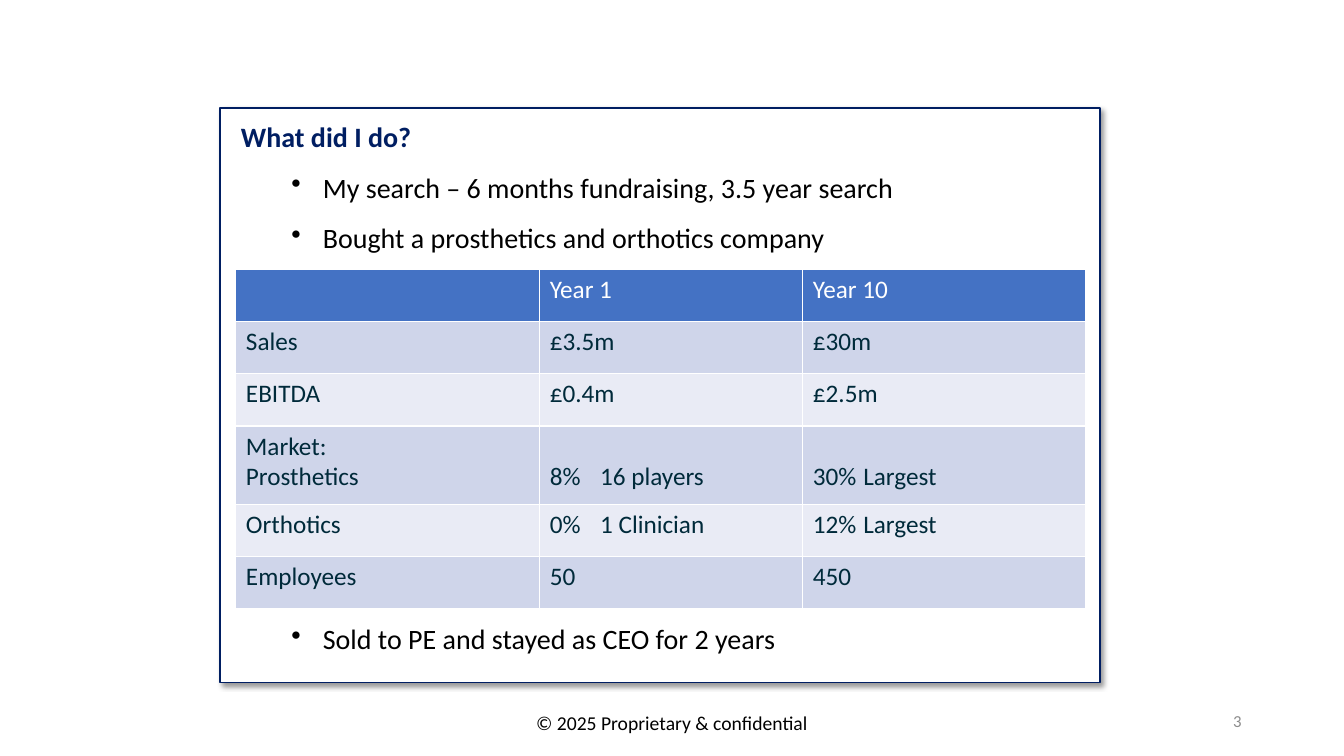
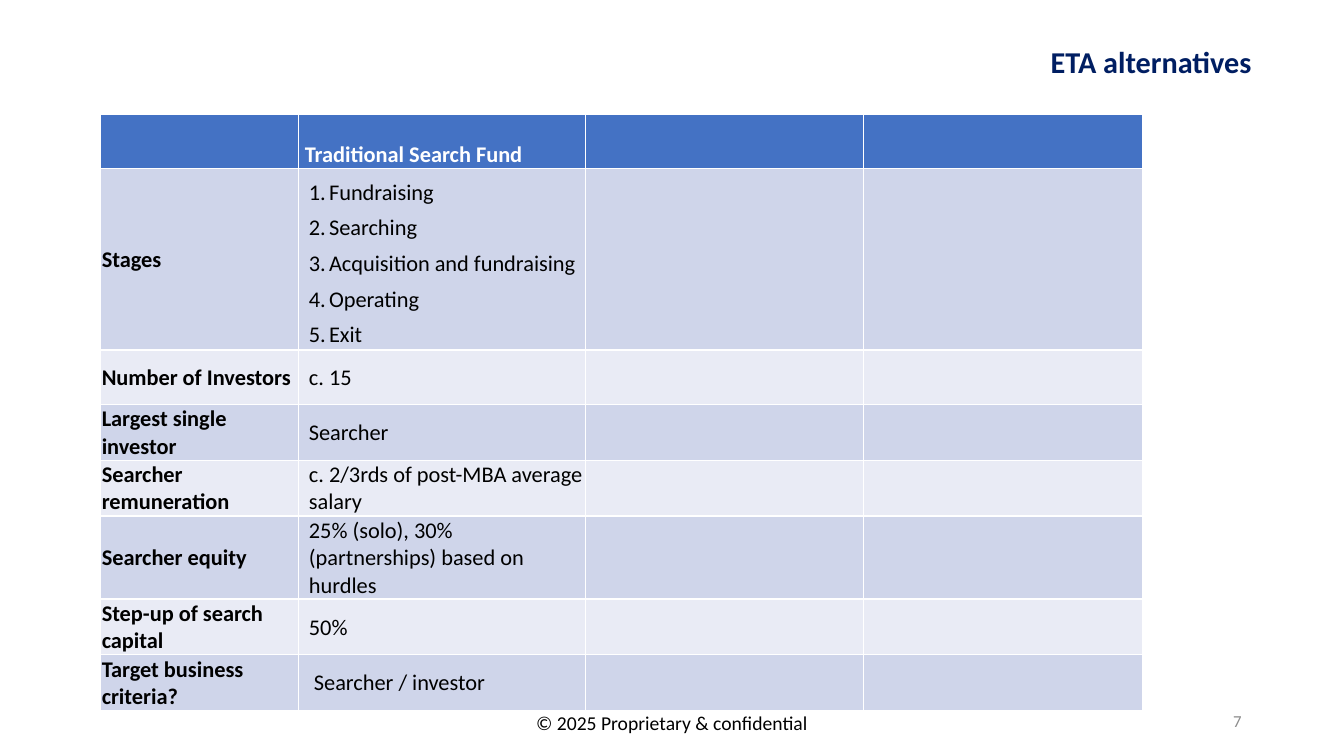
from dataclasses import dataclass

from lxml import etree
from pptx import Presentation
from pptx.dml.color import RGBColor
from pptx.enum import shapes, text
from pptx.oxml import ns
from pptx.util import Pt

ALIGN, ANCHOR = text.PP_ALIGN, text.MSO_ANCHOR


@dataclass(frozen=True)
class Theme:
    font: str = "Calibri"
    navy: str = "001E62"
    ink: str = "002A3A"
    black: str = "000000"
    white: str = "FFFFFF"
    grey: str = "8C8C8C"
    header: str = "4472C4"
    bands: tuple = ("CFD5EA", "E9EBF5")
    title: float = 21.6
    body: float = 20
    table: float = 18
    dense: float = 16
    footer: float = 14
    page: float = 12


T = Theme()
BULLET = ("buChar", {"char": "•"})
NUMBER = ("buAutoNum", {"type": "arabicPeriod"})


def rgb(value):
    return RGBColor.from_string(value)


def sub(parent, tag, **attrs):
    return etree.SubElement(parent, ns.qn("a:" + tag), attrs)


def style(p, size, color, bold=False, align=ALIGN.LEFT):
    p.alignment = align
    f = p.font
    f.name, f.size, f.bold, f.color.rgb = T.font, Pt(size), bold, rgb(color)


def indent(p, left, first=0, marker=None, tab=None):
    """Set the indents in points, with an optional list marker or tab stop."""
    pPr = p._p.get_or_add_pPr()
    pPr.set("marL", str(Pt(left)))
    pPr.set("indent", str(Pt(first)))
    if marker:
        sub(pPr, marker[0], **marker[1])
    if tab:
        sub(sub(pPr, "tabLst"), "tab", pos=str(Pt(tab)), algn="l")


def paragraphs(tf, lines):
    """Write one paragraph per line and yield each for formatting."""
    for i, line in enumerate(lines):
        p = tf.paragraphs[0] if i == 0 else tf.add_paragraph()
        p.text = line
        yield p


def add_text(s, box, lines, anchor=ANCHOR.TOP):
    tf = s.shapes.add_textbox(*map(Pt, box)).text_frame
    tf.word_wrap, tf.vertical_anchor = True, anchor
    return list(paragraphs(tf, lines))


def add_bullets(s, box, bullets, heading=None):
    lines = ([heading] if heading else []) + bullets
    for i, p in enumerate(add_text(s, box, lines)):
        p.space_after = Pt(12)
        if heading and i == 0:
            style(p, T.body, T.navy, True)
        else:
            p.level = 1
            indent(p, 58.5, -22.5, BULLET)
            style(p, T.body, T.black)


def add_card(s, box):
    sp = s.shapes.add_shape(shapes.MSO_SHAPE.RECTANGLE, *map(Pt, box))
    sp.fill.solid()
    sp.fill.fore_color.rgb = rgb(T.white)
    sp.line.color.rgb, sp.line.width = rgb(T.navy), Pt(1.25)
    sp.shadow.inherit = False
    effects = sp._element.spPr.find(ns.qn("a:effectLst"))
    shadow = sub(effects, "outerShdw", blurRad=str(Pt(4)), dist=str(Pt(2.8)),
                 dir="2700000", algn="tl", rotWithShape="0")
    sub(sub(shadow, "srgbClr", val=T.black), "alpha", val="40000")


def add_grid(s, left, top, widths, heights):
    """Add an empty table with a header fill and two alternating row fills."""
    table = s.shapes.add_table(len(heights), len(widths), Pt(left), Pt(top),
                               Pt(sum(widths)), Pt(sum(heights))).table
    for column, width in zip(table.columns, widths):
        column.width = Pt(width)
    for i, (row, height) in enumerate(zip(table.rows, heights)):
        row.height = Pt(height)
        for cell in row.cells:
            cell.fill.solid()
            cell.fill.fore_color.rgb = rgb(T.bands[(i - 1) % 2] if i else T.header)
    return table


def add_footer(s, number):
    p, = add_text(s, (318, 504.5, 324, 29), ["© 2025 Proprietary & confidential"])
    style(p, T.footer, T.black, align=ALIGN.CENTER)
    p, = add_text(s, (678, 500.5, 216, 29), [number], ANCHOR.MIDDLE)
    style(p, T.page, T.grey, align=ALIGN.RIGHT)


def add_title(s, box, title):
    sp = s.shapes.title
    sp.left, sp.top, sp.width, sp.height = map(Pt, box)
    tf = sp.text_frame
    tf.vertical_anchor, tf.margin_right = ANCHOR.MIDDLE, 0
    p, = paragraphs(tf, [title])
    p.line_spacing = 0.9
    style(p, T.title, T.navy, True, ALIGN.RIGHT)


def add_results(s, left, top):
    rows = [("", "Year 1", "Year 10"),
            ("Sales", "£3.5m", "£30m"),
            ("EBITDA", "£0.4m", "£2.5m"),
            ("Market:\nProsthetics", "8%\t16 players", "30%\tLargest"),
            ("Orthotics", "0%\t1 Clinician", "12%\tLargest"),
            ("Employees", "50", "450")]
    market, tabs = 3, (None, 30, 39)
    heights = [56.2 if i == market else 37.3 for i in range(len(rows))]
    table = add_grid(s, left, top, (217, 188, 202), heights)
    for i, row in enumerate(rows):
        for j, value in enumerate(row):
            cell = table.cell(i, j)
            if i == market:
                cell.vertical_anchor, cell.margin_bottom = ANCHOR.BOTTOM, Pt(8.6)
            for p in paragraphs(cell.text_frame, value.split("\n")):
                if "\t" in value:
                    indent(p, 0, tab=tabs[j])
                style(p, T.table, T.ink if i else T.white)


def add_alternatives(s, left, top):
    stages = ["Fundraising", "Searching", "Acquisition and fundraising",
              "Operating", "Exit"]
    rows = [("", ["Traditional Search Fund"]),
            ("Stages", stages),
            ("Number of Investors", ["c. 15"]),
            ("Largest single investor", ["Searcher"]),
            ("Searcher remuneration", ["c. 2/3rds of post-MBA average salary"]),
            ("Searcher equity", ["25% (solo), 30% (partnerships) based on hurdles"]),
            ("Step-up of search capital", ["50%"]),
            ("Target business criteria?", ["Searcher / investor"])]
    heights = [129.6 if lines is stages else 38.9 for _, lines in rows]
    table = add_grid(s, left, top, (141.5, 204.5, 199, 199), heights)
    for i, (label, lines) in enumerate(rows):
        for j, content in enumerate(([label], lines)):
            cell = table.cell(i, j)
            cell.vertical_anchor = ANCHOR.MIDDLE if i else ANCHOR.BOTTOM
            cell.margin_left = cell.margin_right = cell.margin_top = Pt(0.7)
            cell.margin_bottom = 0
            for p in paragraphs(cell.text_frame, content):
                if content is stages:
                    p.line_spacing = 1.3
                    indent(p, 20.9, -14.4, NUMBER)
                elif i == 0:
                    indent(p, 3.6)
                elif j == 1:
                    indent(p, 10.1 if i == len(rows) - 1 else 6.5)
                style(p, T.dense, T.black if i else T.white, i == 0 or j == 0)


def build_story(prs):
    s = prs.slides.add_slide(prs.slide_layouts[6])
    x, y, w, h = 157, 77, 629, 410.5
    add_card(s, (x, y, w, h))
    add_bullets(s, (x + 8, y + 5, w - 15, 104.5),
                ["My search – 6 months fundraising, 3.5 year search",
                 "Bought a prosthetics and orthotics company"],
                heading="What did I do?")
    add_results(s, x + 11.5, y + 115.5)
    add_bullets(s, (x + 8, y + 363.5, w - 15, 31.5),
                ["Sold to PE and stayed as CEO for 2 years"])
    add_footer(s, "3")


def build_alternatives(prs):
    s = prs.slides.add_slide(prs.slide_layouts[5])
    add_title(s, (250.5, 30, 643.5, 31), "ETA alternatives")
    add_alternatives(s, 72, 81.5)
    add_footer(s, "7")


def main():
    prs = Presentation()
    prs.slide_width, prs.slide_height = Pt(960), Pt(540)
    build_story(prs)
    build_alternatives(prs)
    prs.save("out.pptx")


if __name__ == "__main__":
    main()
